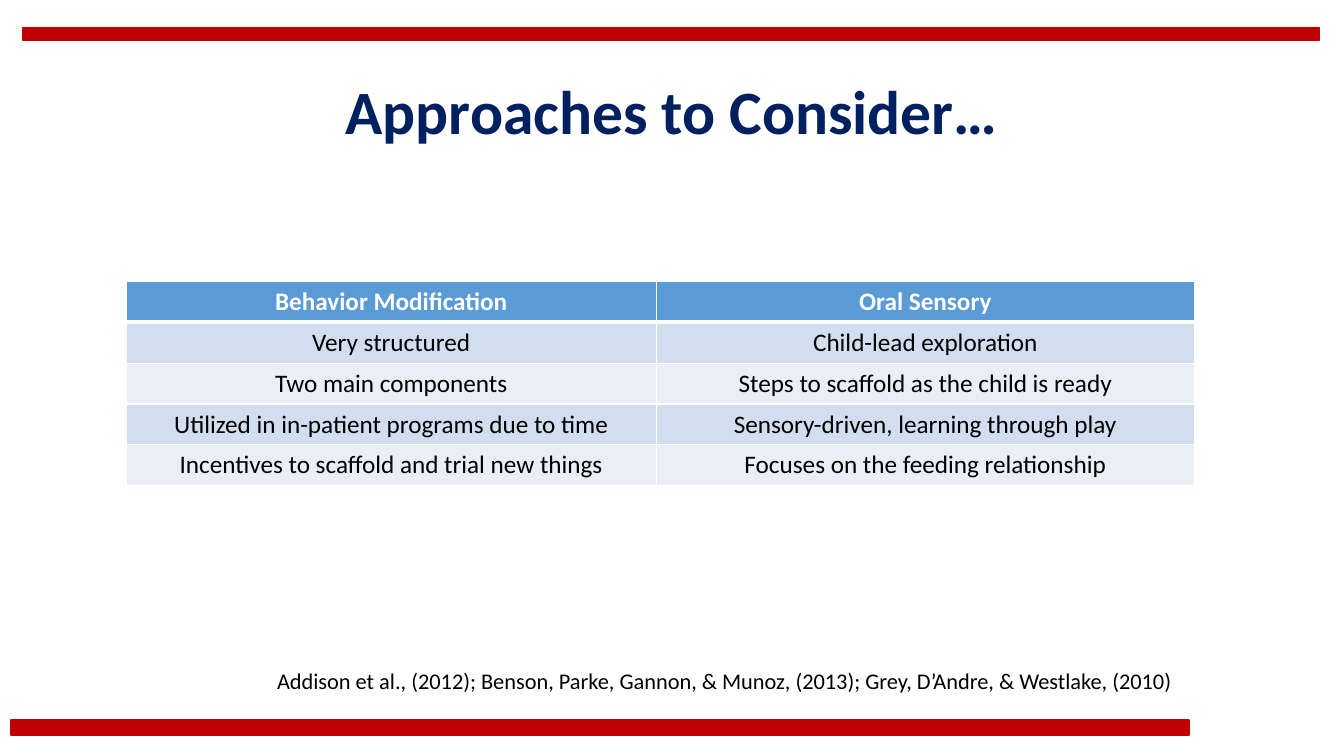
from dataclasses import dataclass

from lxml.etree import SubElement
from pptx import Presentation
from pptx.dml.color import RGBColor
from pptx.enum.shapes import MSO_SHAPE as Shape
from pptx.enum.text import MSO_ANCHOR as Anchor, PP_ALIGN as Align
from pptx.oxml.ns import qn
from pptx.util import Cm, Pt


@dataclass(frozen=True)
class Theme:
    font: str = "Calibri"
    red: str = "C00000"
    navy: str = "002060"
    black: str = "000000"
    white: str = "FFFFFF"
    header: str = "5B9BD5"
    bands: tuple = ("EAEFF7", "D2DEEF")
    title_size: int = 44
    table_size: int = 18
    citation_size: int = 16


theme = Theme()


def write(frame, text, size, color, align, bold=False):
    para = frame.paragraphs[0]
    para.text = text
    para.alignment = align
    para.font.name = theme.font
    para.font.size = Pt(size)
    para.font.bold = bold
    para.font.color.rgb = RGBColor.from_string(color)
    return para


def add_border(cell, side, points, position):
    properties = cell._tc.get_or_add_tcPr()
    line = SubElement(properties, qn(f"a:{side}"), w=str(Pt(points)))
    fill = SubElement(line, qn("a:solidFill"))
    SubElement(fill, qn("a:srgbClr"), val=theme.white)
    properties.insert(position, line)


deck = Presentation()
deck.slide_width, deck.slide_height = Cm(33.87), Cm(19.05)
page = deck.slides.add_slide(deck.slide_layouts[5])

bars = [(0.28, 18.14, 29.69, 0.38), (0.58, 0.69, 32.66, 0.33)]
for place in bars:
    bar = page.shapes.add_shape(Shape.RECTANGLE, *map(Cm, place))
    bar.shadow.inherit = False
    bar.fill.solid()
    bar.fill.fore_color.rgb = RGBColor.from_string(theme.red)
    bar.line.color.rgb = RGBColor.from_string(theme.red)
    bar.line.width = Pt(1)

title = page.shapes.title
title.left, title.top, title.width, title.height = map(Cm, (3.35, 0.79, 27.18, 4.19))
title.text_frame.vertical_anchor = Anchor.MIDDLE
heading = write(title.text_frame, "Approaches to Consider…", theme.title_size,
                theme.navy, Align.CENTER, bold=True)
heading.line_spacing = 0.9

approaches = [
    ("Behavior Modification", "Oral Sensory"),
    ("Very structured", "Child-lead exploration"),
    ("Two main components", "Steps to scaffold as the child is ready"),
    ("Utilized in in-patient programs due to time", "Sensory-driven, learning through play"),
    ("Incentives to scaffold and trial new things", "Focuses on the feeding relationship"),
]
column_widths = (13.36, 13.56)
row_height = 1.03
table = page.shapes.add_table(
    len(approaches), len(column_widths), Cm(3.18), Cm(7.09),
    Cm(sum(column_widths)), Cm(row_height * len(approaches))).table
for column, width in zip(table.columns, column_widths):
    column.width = Cm(width)

for row, texts in enumerate(approaches):
    is_header = row == 0
    for column, text in enumerate(texts):
        cell = table.cell(row, column)
        write(cell.text_frame, text, theme.table_size,
              theme.white if is_header else theme.black, Align.CENTER, bold=is_header)
        cell.fill.solid()
        cell.fill.fore_color.rgb = RGBColor.from_string(
            theme.header if is_header else theme.bands[row % 2])
        borders = {"lnL": 1, "lnR": 1, "lnT": 3 if row == 1 else 1, "lnB": 3 if is_header else 1}
        for position, (side, points) in enumerate(borders.items()):
            add_border(cell, side, points, position)

citation = page.shapes.add_textbox(Cm(3.35), Cm(16.69), Cm(26.44), Cm(0.94))
citation.text_frame.word_wrap = True
write(citation.text_frame,
      "Addison et al., (2012); Benson, Parke, Gannon, & Munoz, (2013); "
      "Grey, D’Andre, & Westlake, (2010)",
      theme.citation_size, theme.black, Align.RIGHT)

deck.save("out.pptx")
